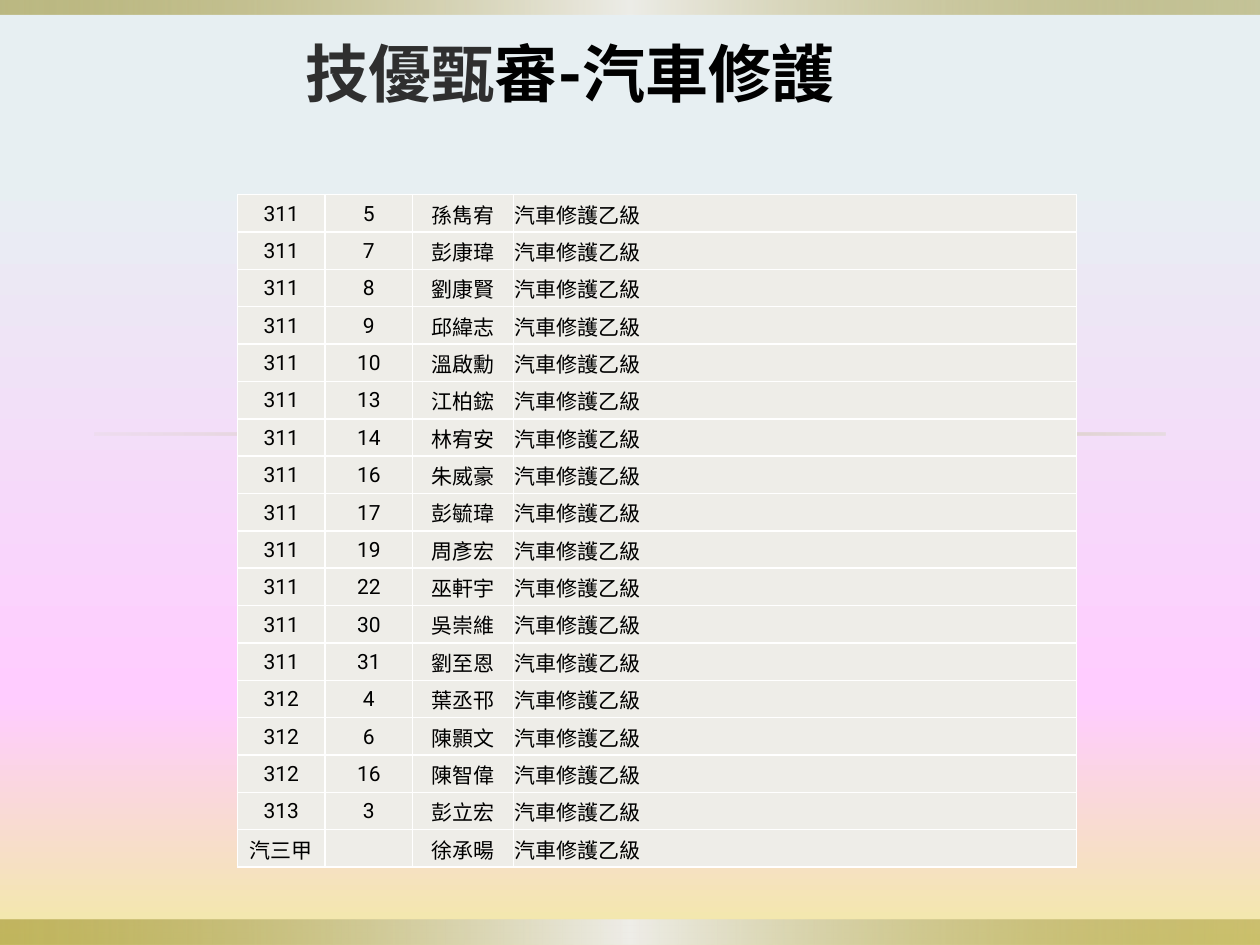
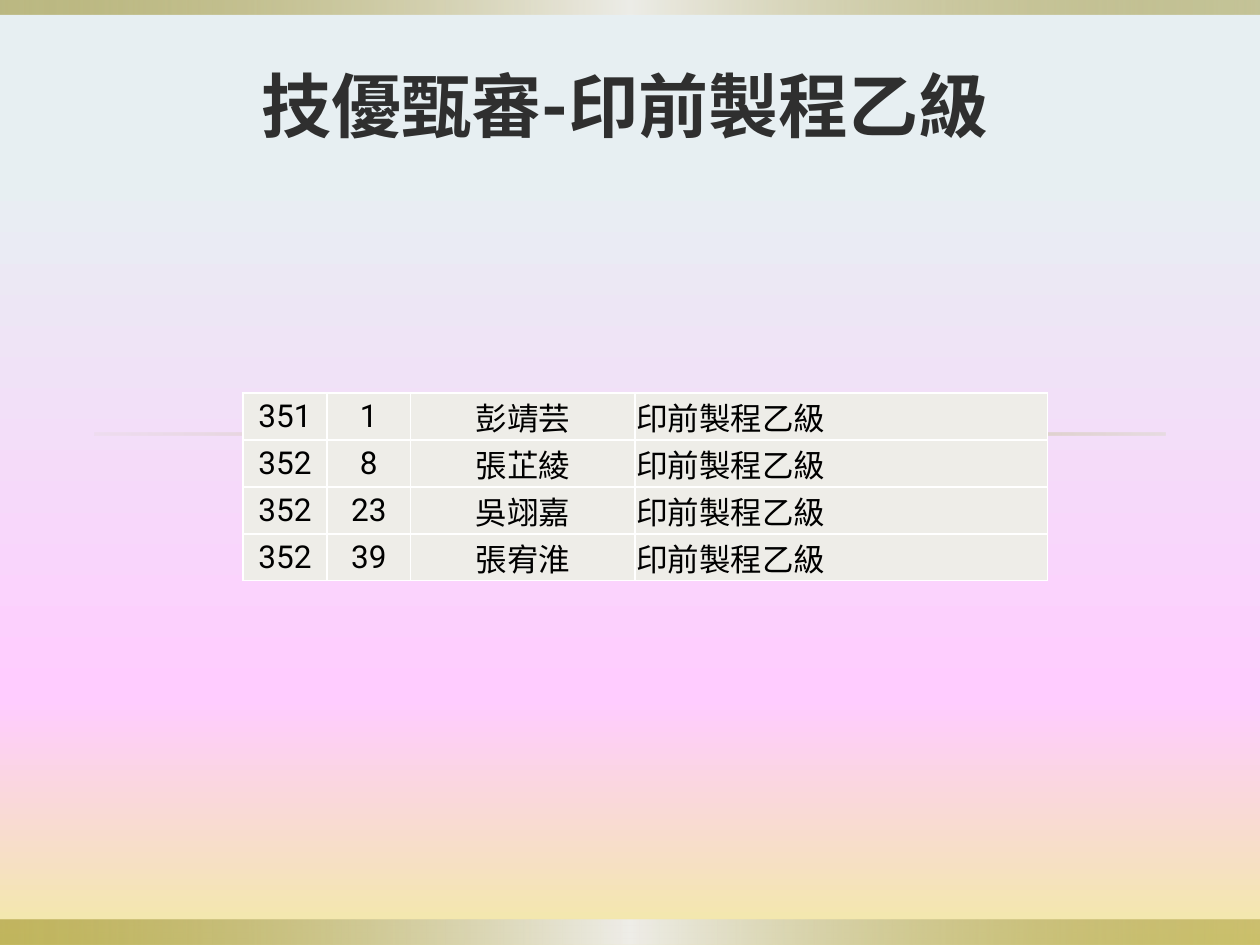
from lxml.etree import SubElement
from pptx import Presentation
from pptx.dml.color import RGBColor
from pptx.enum.shapes import MSO_SHAPE as Preset
from pptx.enum.text import MSO_ANCHOR as Anchor, MSO_AUTO_SIZE as AutoSize, PP_ALIGN as Align
from pptx.oxml.ns import qn
from pptx.util import Inches, Pt

COLORS = {"sky": "E7EFF2", "pink": "FFCCFF", "cream": "F2EAA5", "olive": "918415",
          "pale": "EEEDE8", "sand": "DCD9CC", "ink": "2F2F2F", "black": "000000",
          "white": "FFFFFF"}
FONT = "Roboto"
COLUMNS, ROWS = 100, 75
UNIT = Inches(10) // COLUMNS

BACKDROP = [(18, "sky", 100), (74, "pink", 100), (100, "cream", 100)]
BAND = [(0, "olive", 50), (50, "pale", 100), (100, "olive", 40)]
RULE = [(0, "sand", 20), (50, "olive", 40), (100, "sand", 50)]
MASTER_BARS = [((0, 73, COLUMNS, 2), BAND), ((0, 0, COLUMNS, 1.15), BAND),
               ((7.5, 34.35, 85, 0.2), RULE)]

TITLE_FRAME = {"vertical_anchor": Anchor.TOP, "auto_size": AutoSize.NONE, "word_wrap": True}
CELL_FORMAT = {"vertical_anchor": Anchor.MIDDLE, "margin_left": Inches(0.01),
               "margin_right": Inches(0.01), "margin_top": Inches(0.01), "margin_bottom": 0}

CAR_STUDENTS = [
    ("311", "5", "孫雋宥"), ("311", "7", "彭康瑋"), ("311", "8", "劉康賢"),
    ("311", "9", "邱緯志"), ("311", "10", "溫啟勳"), ("311", "13", "江柏鋐"),
    ("311", "14", "林宥安"), ("311", "16", "朱威豪"), ("311", "17", "彭毓瑋"),
    ("311", "19", "周彥宏"), ("311", "22", "巫軒宇"), ("311", "30", "吳崇維"),
    ("311", "31", "劉至恩"), ("312", "4", "葉丞邗"), ("312", "6", "陳顥文"),
    ("312", "16", "陳智偉"), ("313", "3", "彭立宏"), ("汽三甲", "", "徐承暘")]
PREPRESS_STUDENTS = [("351", "1", "彭靖芸"), ("352", "8", "張芷綾"),
                     ("352", "23", "吳翊嘉"), ("352", "39", "張宥淮")]

SLIDES = [
    {"title": {"box": (5.1, 2.9, 80.3, 5.4), "size": 36,
               "parts": [("技優甄", "ink"), ("審-汽車修護", "black")]},
     "roster": {"box": (18.85, 15.45, 66.6, 53.4), "widths": (6.95, 6.95, 8, 44.7), "size": 12,
                "students": CAR_STUDENTS, "certificate": "汽車修護乙級"}},
    {"title": {"box": (2, 5.2, 96.5, 8.7), "size": 40,
               "parts": [("技優甄審-印前製程乙級 ", "ink")]},
     "roster": {"box": (19.3, 31.2, 63.9, 14.8), "widths": (6.65, 6.65, 17.8, 32.75), "size": 18,
                "students": PREPRESS_STUDENTS, "certificate": "印前製程乙級"}},
]


def grid(values):
    """Turn grid units into slide lengths."""
    return [round(value * UNIT) for value in values]


def set_all(target, formats):
    """Set every attribute of a dict on one object."""
    for name, value in formats.items():
        setattr(target, name, value)


def fill_gradient(fill, holder, stops, angle):
    """Fill with a linear gradient of (position, colour, opacity) stops."""
    fill.gradient()
    fill.gradient_angle = angle
    stop_list = next(holder.iter(qn("a:gsLst")))
    for old_stop in list(stop_list):
        stop_list.remove(old_stop)
    for position, color, opacity in stops:
        stop = SubElement(stop_list, qn("a:gs"), pos=str(position * 1000))
        shade = SubElement(stop, qn("a:srgbClr"), val=COLORS[color])
        if opacity < 100:
            SubElement(shade, qn("a:alpha"), val=str(opacity * 1000))


def decorate_master(deck, page):
    """Give the slide master its backdrop, bands and rule."""
    master = deck.slide_master
    fill_gradient(master.background.fill, master._element, BACKDROP, 270)
    for number, (box, stops) in enumerate(MASTER_BARS):
        bar = page.shapes.add_shape(Preset.RECTANGLE, *grid(box))
        bar.shadow.inherit = False
        bar.line.fill.background()
        fill_gradient(bar.fill, bar._element, stops, 0)
        bar._element.nvSpPr.cNvPr.set("id", str(100 + number))
        master.shapes._spTree.append(bar._element)


def add_span(para, text, size, color, bold=False):
    """Add one run of text in the deck's font."""
    span = para.add_run()
    span.text = text
    set_all(span.font, {"size": Pt(size), "bold": bold, "name": FONT})
    span.font.color.rgb = RGBColor.from_string(COLORS[color])
    span._r.get_or_add_rPr().set("lang", "zh-TW")


def write_title(page, box, size, parts):
    """Place the title and write its coloured parts."""
    title = page.shapes.title
    set_all(title, dict(zip(("left", "top", "width", "height"), grid(box))))
    set_all(title.text_frame, TITLE_FRAME)
    para = title.text_frame.paragraphs[0]
    set_all(para, {"alignment": Align.CENTER, "line_spacing": 0.9})
    for text, color in parts:
        add_span(para, text, size, color, bold=True)


def style_cell(cell):
    """Give a cell its insets, white borders and pale fill."""
    set_all(cell, CELL_FORMAT)
    for side in ("lnL", "lnR", "lnT", "lnB"):
        border = SubElement(cell._tc.get_or_add_tcPr(), qn(f"a:{side}"), w=str(Pt(1)))
        paint = SubElement(border, qn("a:solidFill"))
        SubElement(paint, qn("a:srgbClr"), val=COLORS["white"])
    cell.fill.solid()
    cell.fill.fore_color.rgb = RGBColor.from_string(COLORS["pale"])


def add_roster(page, box, widths, size, students, certificate):
    """Add the table of classes, seats, names and certificates."""
    table = page.shapes.add_table(len(students), len(widths), *grid(box)).table
    set_all(table, {"first_row": False, "horz_banding": False})
    for column, width in zip(table.columns, grid(widths)):
        column.width = width
    for row, student in zip(table.rows, students):
        for cell, text in zip(row.cells, (*student, certificate)):
            style_cell(cell)
            para = cell.text_frame.paragraphs[0]
            para.alignment = Align.LEFT if text == certificate else Align.CENTER
            if text:
                add_span(para, text, size, "black")
            else:
                para.font.size = Pt(size)


def main():
    """Build the deck and save it."""
    deck = Presentation()
    set_all(deck, {"slide_width": COLUMNS * UNIT, "slide_height": ROWS * UNIT})
    title_only = deck.slide_layouts.get_by_name("Title Only")
    for content in SLIDES:
        page = deck.slides.add_slide(title_only)
        write_title(page, **content["title"])
        add_roster(page, **content["roster"])
    decorate_master(deck, page)
    deck.save("out.pptx")


if __name__ == "__main__":
    main()
